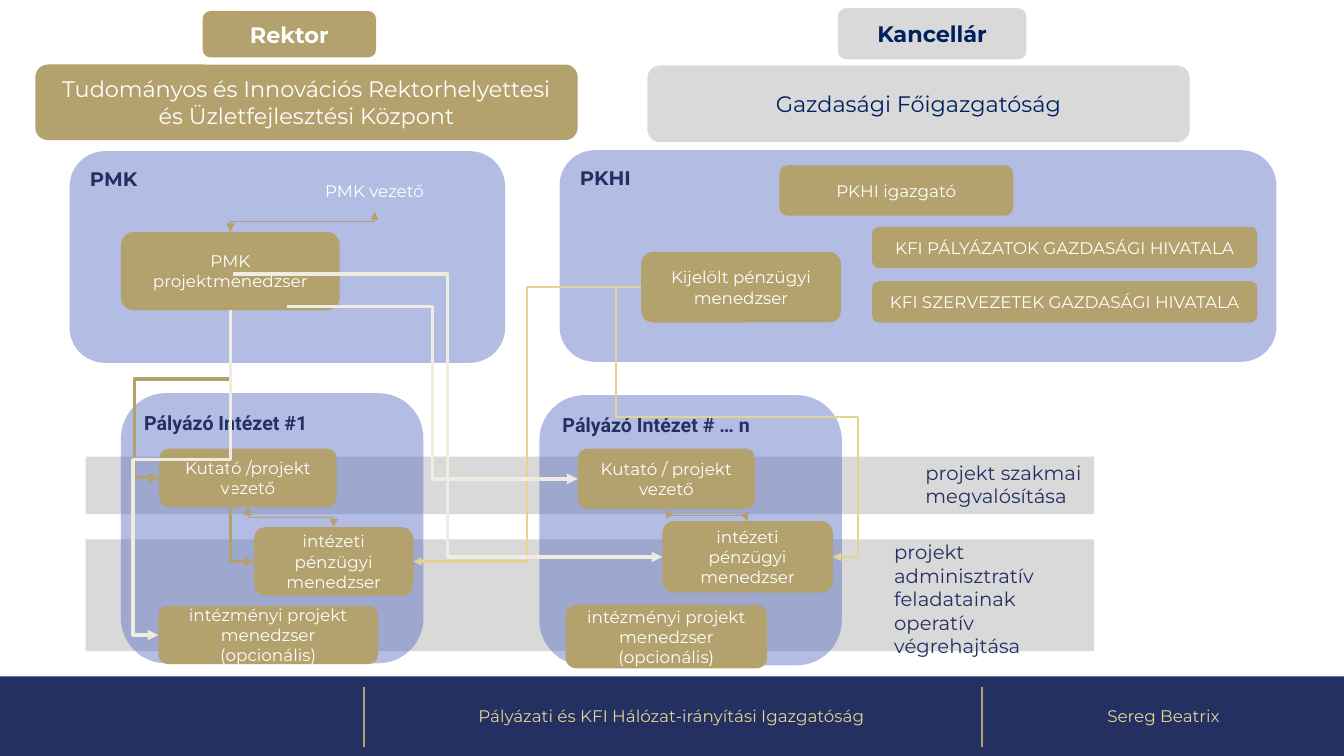
import pptx
import pptx.util
import pptx.dml.color
import pptx.enum.shapes
import pptx.enum.text
import pptx.oxml.ns
import lxml.etree

# Content: lengths in px, 100 px to the inch
PX = 9144
COLORS = {
    "navy": "242F62", "gold": "B3A16E", "sand": "E3D496", "cream": "F0ECE2",
    "grey": "D9D9D9", "violet": "5A6DC2", "blue": "002060", "white": "FFFFFF",
}
PANEL_OPACITY = 46
FOOTER = (0, 671, 1333, 79)
FOOTER_DIVIDERS = [361, 974]
FOOTER_TEXTS = [
    ("Pályázati és KFI Hálózat-irányítási Igazgatóság", (359, 671, 614, 79)),
    ("Sereg Beatrix", (974, 671, 360, 79)),
]
BANDS = [(85, 453, 1000, 57), (85, 535, 1000, 111)]
BAND_LABELS = [
    ("projekt szakmai megvalósítása", (908, 452, 182, 57)),
    ("projekt adminisztratív feladatainak operatív végrehajtása", (877, 531, 209, 128)),
]
PANELS = [
    ("PMK", "Montserrat", (69, 150, 432, 210)),
    ("PKHI", "Montserrat", (555, 149, 711, 210)),
    ("Pályázó Intézet #1", "Roboto", (120, 390, 300, 268)),
    ("Pályázó Intézet # … n", "Roboto", (535, 392, 300, 268)),
]
# text, frame, fill, text colour, size, bold
HEADERS = [
    ("Rektor", (201, 11, 172, 46), "gold", "white", 16, True),
    ("Tudományos és Innovációs Rektorhelyettesi és Üzletfejlesztési Központ",
     (35, 64, 538, 75), "gold", "white", 16, False),
    ("Kancellár", (831, 8, 187, 51), "grey", "blue", 16, True),
    ("Gazdasági Főigazgatóság", (642, 65, 538, 76), "grey", "blue", 16, False),
]
ROLES = {
    "pmk_head": ("PMK vezető", (287, 169, 169, 41), None),
    "pmk_manager": ("PMK projektmenedzser", (120, 230, 217, 78), "gold"),
    "finance_1": ("intézeti pénzügyi menedzser", (252, 523, 158, 68), "gold"),
    "optional_1": ("intézményi projekt menedzser (opcionális)", (157, 601, 218, 58), "gold"),
    "research_1": ("Kutató /projekt vezető", (158, 445, 176, 58), "gold"),
    "pkhi_finance": ("Kijelölt pénzügyi menedzser", (636, 250, 198, 70), "gold"),
    "finance_n": ("intézeti pénzügyi menedzser", (657, 517, 169, 71), "gold"),
    "optional_n": ("intézményi projekt menedzser (opcionális)", (561, 600, 200, 63), "gold"),
    "research_n": ("Kutató / projekt vezető", (573, 445, 176, 60), "gold"),
    "pkhi_head": ("PKHI igazgató", (773, 164, 232, 50), "gold"),
    "tender_office": ("KFI PÁLYÁZATOK GAZDASÁGI HIVATALA", (865, 225, 382, 41), "gold"),
    "unit_office": ("KFI SZERVEZETEK GAZDASÁGI HIVATALA", (865, 279, 382, 41), "gold"),
}
TOP, LEFT, BOTTOM, RIGHT = range(4)
# start (role and side, or a point), end, colour, width, two-way, bends, rotation, flips, adjustments
LINKS = [
    (("pmk_head", BOTTOM), ("pmk_manager", TOP), "gold", 0.5, True, 3, 90, "", [0.5]),
    (("finance_1", TOP), ("research_1", BOTTOM), "gold", 0.5, True, 3, 270, "V", [0.5]),
    (("finance_n", TOP), ("research_n", BOTTOM), "gold", 0.5, True, 3, 270, "V", [0.5]),
    (("pkhi_finance", LEFT), ("finance_1", RIGHT), "sand", 1.5, False, 3, 180, "V", [0.5]),
    (("pkhi_finance", LEFT), ("finance_n", RIGHT), "sand", 1.5, False, 5, 180, "HV",
     [-0.13, 0.48, 1.13]),
    (("pmk_manager", BOTTOM), ("research_1", LEFT), "gold", 2.5, False, 4, 90, "", [0.41, 1.35]),
    (("pmk_manager", BOTTOM), ("finance_1", LEFT), "gold", 2.5, False, 2, 270, "H", []),
    (("pmk_manager", BOTTOM), ("optional_1", LEFT), "cream", 2.5, False, 4, 90, "", [0.46, 1.35]),
    ((285, 304), ("research_n", LEFT), "cream", 2.5, False, 3, 0, "", [0.5]),
    ((231, 272), ("finance_n", LEFT), "cream", 2.5, False, 3, 0, "", [0.5]),
]

SHAPES = pptx.enum.shapes.MSO_SHAPE
CONNECTORS = pptx.enum.shapes.MSO_CONNECTOR
ANCHOR = pptx.enum.text.MSO_ANCHOR
ALIGN = pptx.enum.text.PP_ALIGN


def rgb(name):
    return pptx.dml.color.RGBColor.from_string(COLORS[name])


def add_child(parent, tag, **attributes):
    child = lxml.etree.SubElement(parent, pptx.oxml.ns.qn(tag))
    for name, value in attributes.items():
        child.set(name, str(value))
    return child


def write(shape, text, color, size, font="Montserrat", bold=False, centred=True):
    frame = shape.text_frame
    frame.word_wrap = True
    frame.vertical_anchor = ANCHOR.MIDDLE if centred else ANCHOR.TOP
    paragraph = frame.paragraphs[0]
    paragraph.alignment = ALIGN.CENTER if centred else ALIGN.LEFT
    run = paragraph.add_run()
    run.text = text
    run.font.name = font
    run.font.size = pptx.util.Pt(size)
    run.font.bold = bold
    run.font.color.rgb = rgb(color)


def add_box(slide, kind, frame, fill):
    shape = slide.shapes.add_shape(kind, *(value * PX for value in frame))
    shape.shadow.inherit = False
    shape.line.fill.background()
    if fill:
        shape.fill.solid()
        shape.fill.fore_color.rgb = rgb(fill)
    else:
        shape.fill.background()
    return shape


def add_label(slide, text, frame, color, size, centred):
    label = slide.shapes.add_textbox(*(value * PX for value in frame))
    write(label, text, color, size, centred=centred)


def add_line(slide, kind, start, end, color, width):
    line = slide.shapes.add_connector(kind, *(value * PX for value in start + end))
    line.line.color.rgb = rgb(color)
    line.line.width = pptx.util.Pt(width)
    add_child(line._element.spPr, "a:effectLst")
    return line


def add_link(slide, roles, link):
    start, end, color, width, two_way, bends, rotation, flips, adjustments = link
    free_start = start if isinstance(start[0], int) else (0, 0)
    connector = add_line(slide, CONNECTORS.ELBOW, free_start, (0, 0), color, width)
    if start[0] in roles:
        connector.begin_connect(roles[start[0]], start[1])
    connector.end_connect(roles[end[0]], end[1])

    # The frame of a quarter turn has its sides swapped about the same centre
    x1, y1 = connector.begin_x, connector.begin_y
    x2, y2 = connector.end_x, connector.end_y
    across, down = abs(x2 - x1), abs(y2 - y1)
    if rotation in (90, 270):
        across, down = down, across
    connector.left = (x1 + x2 - across) // 2
    connector.top = (y1 + y2 - down) // 2
    connector.width, connector.height = across, down

    properties = connector._element.spPr
    transform = properties.find(pptx.oxml.ns.qn("a:xfrm"))
    transform.set("rot", str(rotation * 60000))
    for axis in "HV":
        transform.set("flip" + axis, "1" if axis in flips else "0")
    geometry = properties.find(pptx.oxml.ns.qn("a:prstGeom"))
    geometry.set("prst", f"bentConnector{bends}")
    guides = geometry.find(pptx.oxml.ns.qn("a:avLst"))
    for number, value in enumerate(adjustments, 1):
        add_child(guides, "a:gd", name=f"adj{number}", fmla=f"val {round(value * 100000)}")
    outline = connector.line._get_or_add_ln()
    if two_way:
        add_child(outline, "a:headEnd", type="triangle")
    add_child(outline, "a:tailEnd", type="triangle")


def main():
    presentation = pptx.Presentation()
    presentation.slide_width = 1333 * PX
    presentation.slide_height = 750 * PX
    slide = presentation.slides.add_slide(presentation.slide_layouts[6])

    # Footer
    add_box(slide, SHAPES.RECTANGLE, FOOTER, "navy")
    for x in FOOTER_DIVIDERS:
        add_line(slide, CONNECTORS.STRAIGHT, (x, 682), (x, 741), "gold", 1.5)
    for text, frame in FOOTER_TEXTS:
        add_label(slide, text, frame, "sand", 12, True)

    # Grey bands and translucent panels
    for frame in BANDS:
        add_box(slide, SHAPES.RECTANGLE, frame, "grey")
    for text, font, frame in PANELS:
        panel = add_box(slide, SHAPES.ROUNDED_RECTANGLE, frame, "violet")
        color = panel._element.spPr.find(".//" + pptx.oxml.ns.qn("a:srgbClr"))
        add_child(color, "a:alpha", val=PANEL_OPACITY * 1000)
        write(panel, text, "navy", 14, font, True, False)
    for text, frame in BAND_LABELS:
        add_label(slide, text, frame, "navy", 14, False)

    # Headers and roles
    for text, frame, fill, color, size, bold in HEADERS:
        header = add_box(slide, SHAPES.ROUNDED_RECTANGLE, frame, fill)
        write(header, text, color, size, bold=bold)
    roles = {}
    for name, (text, frame, fill) in ROLES.items():
        roles[name] = add_box(slide, SHAPES.ROUNDED_RECTANGLE, frame, fill)
        write(roles[name], text, "white", 12)

    # Links between roles
    for link in LINKS:
        add_link(slide, roles, link)

    presentation.save("out.pptx")


if __name__ == "__main__":
    main()
